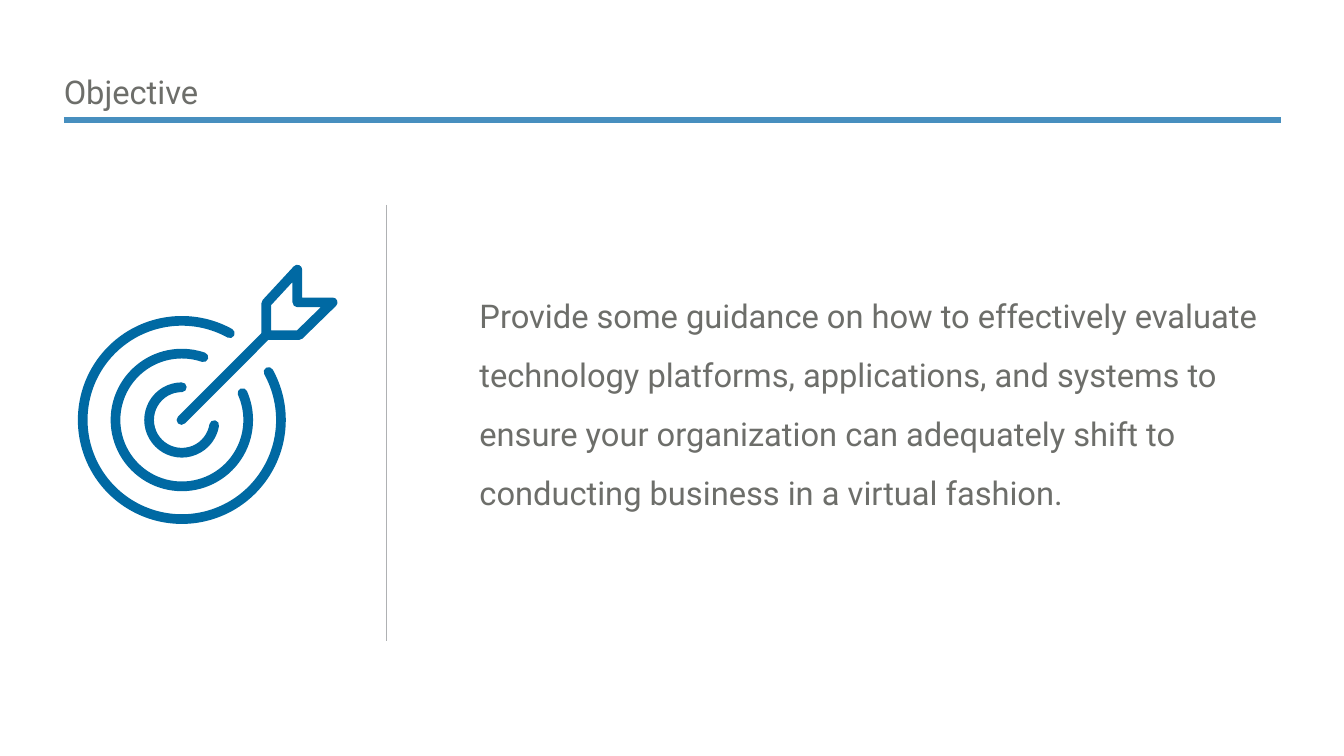
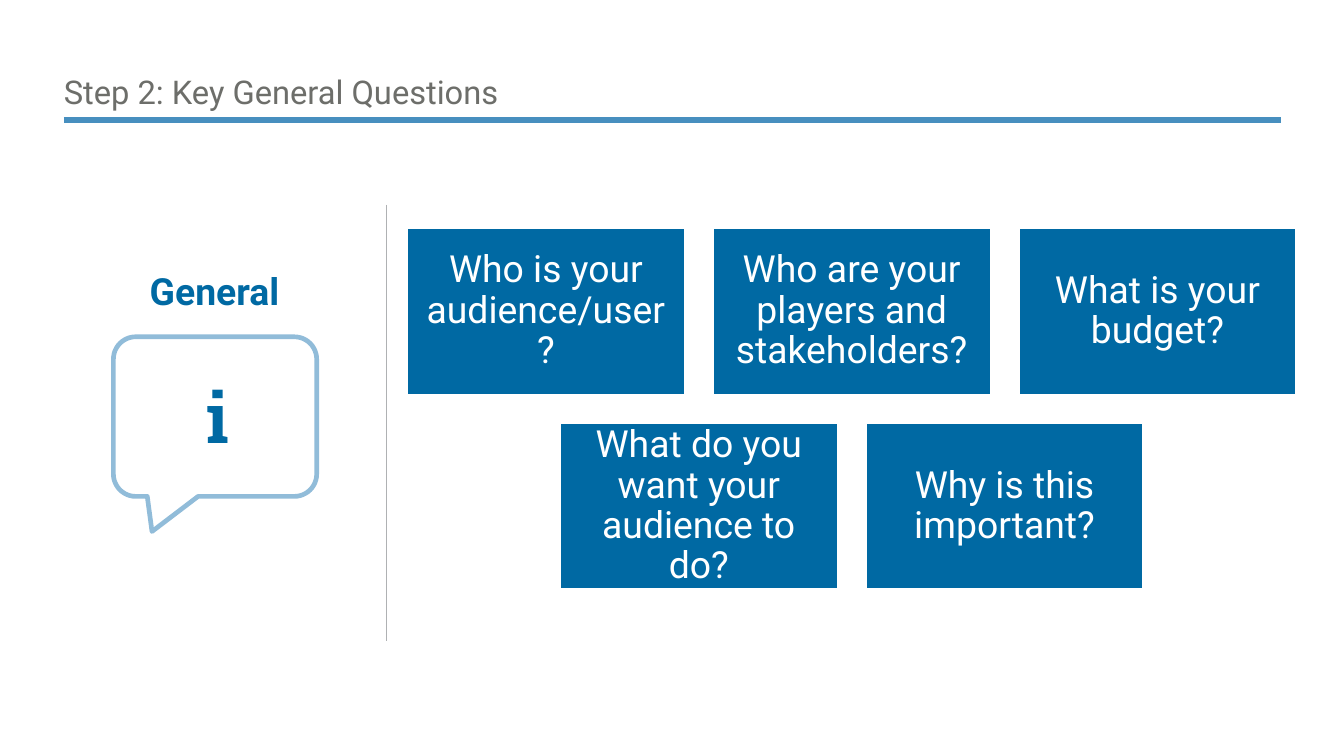
"""Builds an objective slide and a key-questions slide that share one title style."""
from dataclasses import dataclass

from lxml import etree
from pptx import Presentation
from pptx.dml.color import RGBColor
from pptx.enum.shapes import MSO_CONNECTOR, MSO_SHAPE
from pptx.enum.text import MSO_ANCHOR, MSO_AUTO_SIZE, PP_ALIGN
from pptx.oxml.ns import qn
from pptx.util import Inches, Pt

STRAIGHT = MSO_CONNECTOR.STRAIGHT
ARC, CALLOUT, RECTANGLE = MSO_SHAPE.ARC, MSO_SHAPE.ROUNDED_RECTANGULAR_CALLOUT, MSO_SHAPE.RECTANGLE
TOP, MIDDLE, BOTTOM = MSO_ANCHOR.TOP, MSO_ANCHOR.MIDDLE, MSO_ANCHOR.BOTTOM
LEFT, CENTER = PP_ALIGN.LEFT, PP_ALIGN.CENTER
NO_AUTOFIT = MSO_AUTO_SIZE.NONE


@dataclass(frozen=True)
class Theme:
    blue: RGBColor = RGBColor(0x00, 0x69, 0xA3)
    rule: RGBColor = RGBColor(0x47, 0x8F, 0xBF)
    bubble: RGBColor = RGBColor(0x91, 0xBC, 0xD9)
    divider: RGBColor = RGBColor(0xAF, 0xB1, 0xB3)
    gray: RGBColor = RGBColor(0x6D, 0x6E, 0x6A)
    white: RGBColor = RGBColor(0xFF, 0xFF, 0xFF)
    sans: str = "Roboto"
    slab: str = "Roboto Slab"
    text: Pt = Pt(28)
    label: Pt = Pt(32)
    symbol: Pt = Pt(60)
    icon_stroke: Pt = Pt(8.3)


theme = Theme()
body_font = {"name": theme.sans, "size": theme.text, "bold": False}
card_font = {"name": theme.sans, "size": theme.label, "bold": False}
label_font = {"name": theme.sans, "size": theme.label, "bold": True}
symbol_font = {"name": theme.slab, "size": theme.symbol, "bold": True}


def write_text(box, text, font, color, align=LEFT, anchor=TOP, spacing=1.0, margins=(0, 0, 0, 0)):
    frame = box.text_frame
    left, top, right, bottom = (Inches(margin) for margin in margins)
    frame_format = {"word_wrap": True, "auto_size": NO_AUTOFIT, "vertical_anchor": anchor,
                    "margin_left": left, "margin_top": top,
                    "margin_right": right, "margin_bottom": bottom}
    for name, value in frame_format.items():
        setattr(frame, name, value)
    para = frame.paragraphs[0]
    para.alignment = align
    para.line_spacing = spacing
    span = para.add_run()
    span.text = text
    for name, value in font.items():
        setattr(span.font, name, value)
    span.font.color.rgb = color


def add_line(page, start, end, color, width):
    line = page.shapes.add_connector(STRAIGHT, *(Inches(value) for value in start + end))
    line.line.color.rgb = color
    line.line.width = width
    etree.SubElement(line.element.spPr, qn("a:effectLst"))
    return line


deck = Presentation()
deck.slide_width, deck.slide_height = Inches(16), Inches(9)

pages = []
for title in ("Objective", "Step 2: Key General Questions"):
    page = deck.slides.add_slide(deck.slide_layouts[5])
    heading = page.shapes.title
    heading.left, heading.top = Inches(0.76), Inches(0.53)
    heading.width, heading.height = Inches(14.49), Inches(0.79)
    write_text(heading, title, body_font, theme.gray, anchor=BOTTOM)
    add_line(page, (0.76, 1.43), (15.25, 1.43), theme.rule, Pt(4.5))
    add_line(page, (4.6, 2.44), (4.6, 7.63), theme.divider, Pt(0.75))
    pages.append(page)
objective_page, questions_page = pages

statement = objective_page.shapes.add_textbox(Inches(5.61), Inches(2.68), Inches(9.46), Inches(4.03))
write_text(statement,
           "Provide some guidance on how to effectively evaluate technology platforms, "
           "applications, and systems to ensure your organization can adequately shift to "
           "conducting business in a virtual fashion.",
           body_font, theme.gray, anchor=MIDDLE, spacing=1.5, margins=(0.1, 0.04, 0.04, 0.04))

target_x, target_y = 2.165, 5.0
icon_parts = []
for radius, start_angle, end_angle in ((1.18, 331, 299), (0.79, 336, 289), (0.39, 9, 270)):
    ring = objective_page.shapes.add_shape(
        ARC, Inches(target_x - radius), Inches(target_y - radius), Inches(2 * radius), Inches(2 * radius))
    ring.adjustments[0] = start_angle * 0.6
    ring.adjustments[1] = end_angle * 0.6
    icon_parts.append(ring)

feather_points = [(Inches(x), Inches(y)) for x, y in (
    (3.17, 3.61), (3.54, 3.21), (3.54, 3.6), (3.96, 3.6), (3.56, 3.99), (3.17, 3.99))]
feathers = objective_page.shapes.build_freeform(*feather_points[0])
feathers.add_line_segments(feather_points[1:], close=True)
icon_parts.append(feathers.convert_to_shape())

for part in icon_parts:
    part.fill.background()
    part.line.color.rgb = theme.blue
    part.line.width = theme.icon_stroke
    part.shadow.inherit = False

shaft = add_line(objective_page, (2.16, 5), (3.17, 3.99), theme.blue, theme.icon_stroke)
for part in icon_parts + [shaft]:
    outline = part.element.spPr.find(qn("a:ln"))
    outline.set("cap", "rnd")
    etree.SubElement(outline, qn("a:round"))

label = questions_page.shapes.add_textbox(Inches(0.81), Inches(3.19), Inches(3.49), Inches(0.6))
write_text(label, "General", label_font, theme.blue, align=CENTER)

bubble = questions_page.shapes.add_shape(CALLOUT, Inches(1.35), Inches(4.01), Inches(2.42), Inches(1.9))
for index, value in enumerate((-0.31, 0.72, 0.14)):
    bubble.adjustments[index] = value
bubble.fill.solid()
bubble.fill.fore_color.rgb = theme.white
bubble.line.color.rgb = theme.bubble
bubble.line.width = Pt(4)
bubble.shadow.inherit = False

symbol = questions_page.shapes.add_textbox(Inches(1.25), Inches(4.3), Inches(2.69), Inches(1.13))
write_text(symbol, "i", symbol_font, theme.blue, align=CENTER, spacing=1.1,
           margins=(0.1, 0.05, 0.1, 0.05))

question_rows = (
    ("Who is your audience/user?", "Who are your players and stakeholders?", "What is your budget?"),
    ("What do you want your audience to do?", "Why is this important?"),
)
card_width, card_height, gap = 3.31, 1.99, 0.33
grid_center, grid_top = 10.14, 2.71
for row, questions in enumerate(question_rows):
    row_width = len(questions) * (card_width + gap) - gap
    top = grid_top + row * (card_height + gap)
    for column, question in enumerate(questions):
        left = grid_center - row_width / 2 + column * (card_width + gap)
        card = questions_page.shapes.add_shape(
            RECTANGLE, Inches(left), Inches(top), Inches(card_width), Inches(card_height))
        card.fill.solid()
        card.fill.fore_color.rgb = theme.blue
        card.line.color.rgb = theme.white
        card.line.width = Pt(2)
        card.shadow.inherit = False
        write_text(card, question, card_font, theme.white, align=CENTER, anchor=MIDDLE,
                   spacing=0.9, margins=(0.13, 0.13, 0.13, 0.13))

deck.save("out.pptx")
